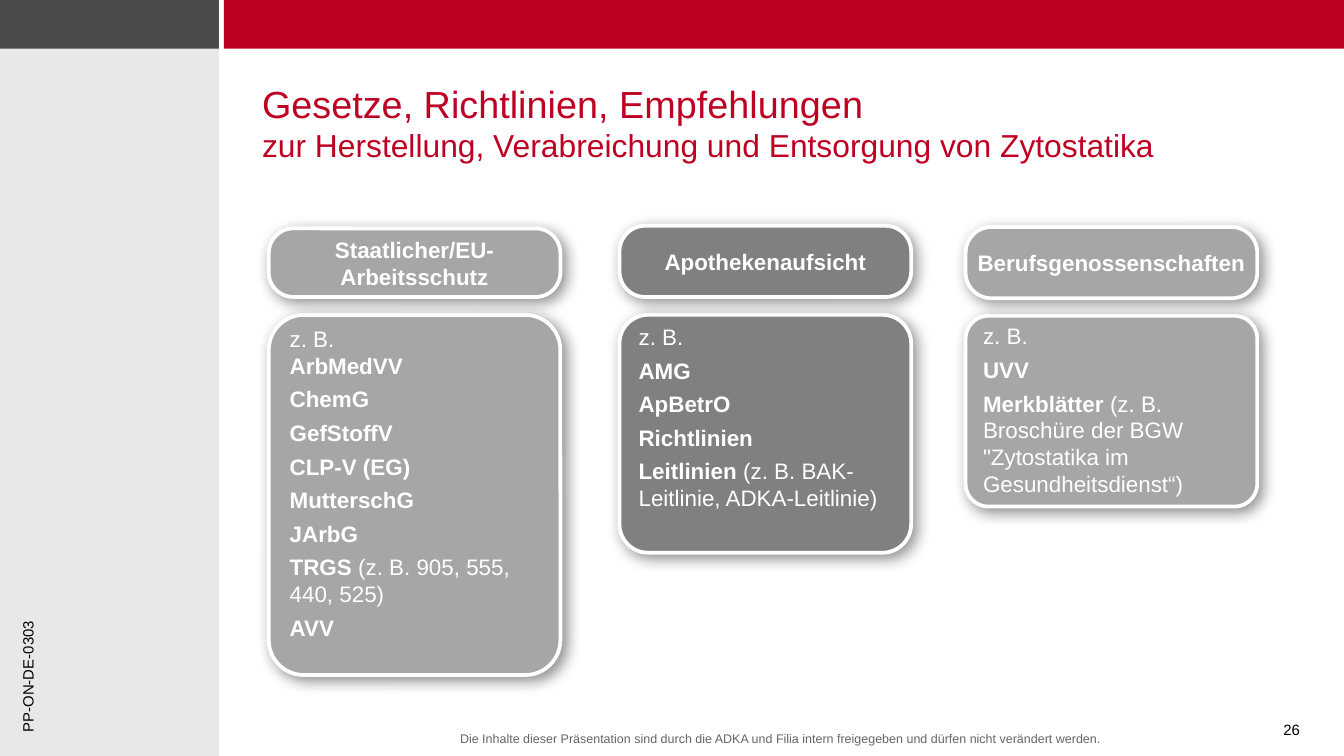
from dataclasses import dataclass

from lxml.etree import SubElement
from pptx import Presentation
from pptx.dml.color import RGBColor
from pptx.enum.shapes import MSO_SHAPE as Shape
from pptx.enum.text import MSO_ANCHOR as Anchor, PP_ALIGN as Align
from pptx.oxml.ns import qn
from pptx.util import Inches, Pt

COLORS = {
    "red": "BE0023", "dark": "4C4B4B", "side": "BEBEBE", "white": "FFFFFF",
    "light": "A6A6A6", "mid": "808080", "note": "666565", "black": "000000",
}
FONT = "Arial"
BREAK = "\n"
WIDTH = Inches(10)
HEIGHT = WIDTH * 9 // 16


@dataclass(frozen=True)
class Area:
    """Left, top, width and height as percentages of the slide."""
    left: float
    top: float
    width: float
    height: float

    def emu(self) -> tuple[int, ...]:
        return (int(WIDTH * self.left / 100), int(HEIGHT * self.top / 100),
                int(WIDTH * self.width / 100), int(HEIGHT * self.height / 100))


@dataclass(frozen=True)
class Words:
    text: str
    size: float = 12
    color: str = "white"
    bold: bool = False


@dataclass(frozen=True)
class Topic:
    heading: str
    color: str
    left: float
    head_top: float
    head_height: float
    body_top: float
    body_height: float
    rules: list[list[Words]]


def plain(text: str) -> Words:
    return Words(text)


def bold(text: str) -> Words:
    return Words(text, bold=True)


def rgb(name: str) -> RGBColor:
    return RGBColor.from_string(COLORS[name])


def write(frame, paragraphs: list[list[Words]], align=Align.LEFT,
          anchor=Anchor.TOP, gap: float = 0) -> None:
    frame.word_wrap = True
    frame.vertical_anchor = anchor
    for index, words in enumerate(paragraphs):
        paragraph = frame.add_paragraph() if index else frame.paragraphs[0]
        paragraph.alignment = align
        if index:
            paragraph.space_before = Pt(gap)
        for part in words:
            if part.text == BREAK:
                paragraph.add_line_break()
                continue
            run = paragraph.add_run()
            run.text = part.text
            run.font.name = FONT
            run.font.size = Pt(part.size)
            run.font.bold = part.bold
            run.font.color.rgb = rgb(part.color)


def set_insets(frame, left: float = 0) -> None:
    frame.margin_left = Inches(left)
    frame.margin_top = frame.margin_right = frame.margin_bottom = 0


def add_text(slide, area: Area, words: list[Words], align=Align.LEFT):
    frame = slide.shapes.add_textbox(*area.emu()).text_frame
    write(frame, [words], align)
    return frame


def add_band(slide, area: Area, color: str):
    band = slide.shapes.add_shape(Shape.RECTANGLE, *area.emu())
    band.shadow.inherit = False
    band.fill.solid()
    band.fill.fore_color.rgb = rgb(color)
    band.line.fill.background()
    return band


def set_alpha(color_element, percent: int) -> None:
    SubElement(color_element, qn("a:alpha"), val=str(percent * 1000))


def add_card(slide, area: Area, color: str, rounding: float):
    card = slide.shapes.add_shape(Shape.ROUNDED_RECTANGLE, *area.emu())
    card.adjustments[0] = rounding
    card.fill.solid()
    card.fill.fore_color.rgb = rgb(color)
    card.line.color.rgb = rgb("white")
    card.line.width = Pt(2)
    # Soft shadow to the lower right
    card.shadow.inherit = False
    effects = card._element.spPr.find(qn("a:effectLst"))
    shadow = SubElement(effects, qn("a:outerShdw"), blurRad=str(Pt(8)),
                        dist=str(Pt(3)), dir=str(45 * 60000), algn="tl",
                        rotWithShape="0")
    set_alpha(SubElement(shadow, qn("a:srgbClr"), val=COLORS["black"]), 43)
    return card.text_frame


def add_topic(slide, topic: Topic) -> None:
    body = add_card(slide, Area(topic.left, topic.body_top, 21.7, topic.body_height),
                    topic.color, 0.12)
    set_insets(body, left=0.08)
    write(body, topic.rules, gap=3.6)
    head = add_card(slide, Area(topic.left, topic.head_top, 21.7, topic.head_height),
                    topic.color, 0.36)
    set_insets(head)
    write(head, [[bold(topic.heading)]], Align.CENTER, Anchor.MIDDLE)


TOPICS = [
    Topic("Staatlicher/EU- Arbeitsschutz", "light", 20, 30.22, 9.07, 41.65, 47.64, [
        [plain("z. B."), plain(BREAK), bold("ArbMedVV")],
        [bold("ChemG")],
        [bold("GefStoffV")],
        [bold("CLP-V (EG)")],
        [bold("MutterschG")],
        [bold("JArbG")],
        [bold("TRGS "), plain("(z. B. 905, 555, 440, 525)")],
        [bold("AVV")],
    ]),
    Topic("Apothekenaufsicht", "mid", 46.1, 29.87, 9.42, 41.65, 31.47, [
        [plain("z. B.")],
        [bold("AMG")],
        [bold("ApBetrO")],
        [bold("Richtlinien")],
        [bold("Leitlinien "), plain("(z. B. BAK-Leitlinie, ADKA-Leitlinie)")],
    ]),
    Topic("Berufsgenossenschaften", "light", 71.85, 30.04, 9.42, 41.78, 25.24, [
        [plain("z. B.")],
        [bold("UVV")],
        [bold("Merkblätter "),
         plain('(z. B. Broschüre der BGW "Zytostatika im Gesundheitsdienst“)')],
    ]),
]


def main() -> None:
    deck = Presentation()
    deck.slide_width, deck.slide_height = WIDTH, HEIGHT
    slide = deck.slides.add_slide(deck.slide_layouts[6])

    # Side panel and top bands
    panel = add_band(slide, Area(0, 5.87, 16.3, 94.13), "side")
    set_alpha(panel._element.spPr.find(qn("a:solidFill"))[0], 35)
    add_band(slide, Area(0, 0, 16.3, 6.45), "dark")
    add_band(slide, Area(16.65, 0, 83.35, 6.45), "red")

    # Title
    title = add_text(slide, Area(19.5, 10.67, 73.3, 9.6), [
        Words("Gesetze, Richtlinien, Empfehlungen", 20.25, "red"),
        Words(BREAK),
        Words("zur Herstellung, Verabreichung und Entsorgung von Zytostatika", 17, "red"),
    ])
    set_insets(title)

    # Columns of regulations
    for topic in TOPICS:
        add_topic(slide, topic)

    # Document code, footer and page number
    code = add_text(slide, Area(0.9, 61.69, 3.3, 36.98),
                    [Words("PP-ON-DE-0303", 8, "black")])
    code._txBody.bodyPr.set("vert", "vert270")
    add_text(slide, Area(16.3, 95.82, 83.7, 4), [
        Words("Die Inhalte dieser Präsentation sind durch die ADKA und Filia intern "
              "freigegeben und dürfen nicht verändert werden.", 6.75, "note"),
    ], Align.CENTER)
    add_text(slide, Area(90.2, 94.4, 7.5, 4.44), [Words("26", 8, "black")], Align.RIGHT)

    deck.save("out.pptx")


if __name__ == "__main__":
    main()
